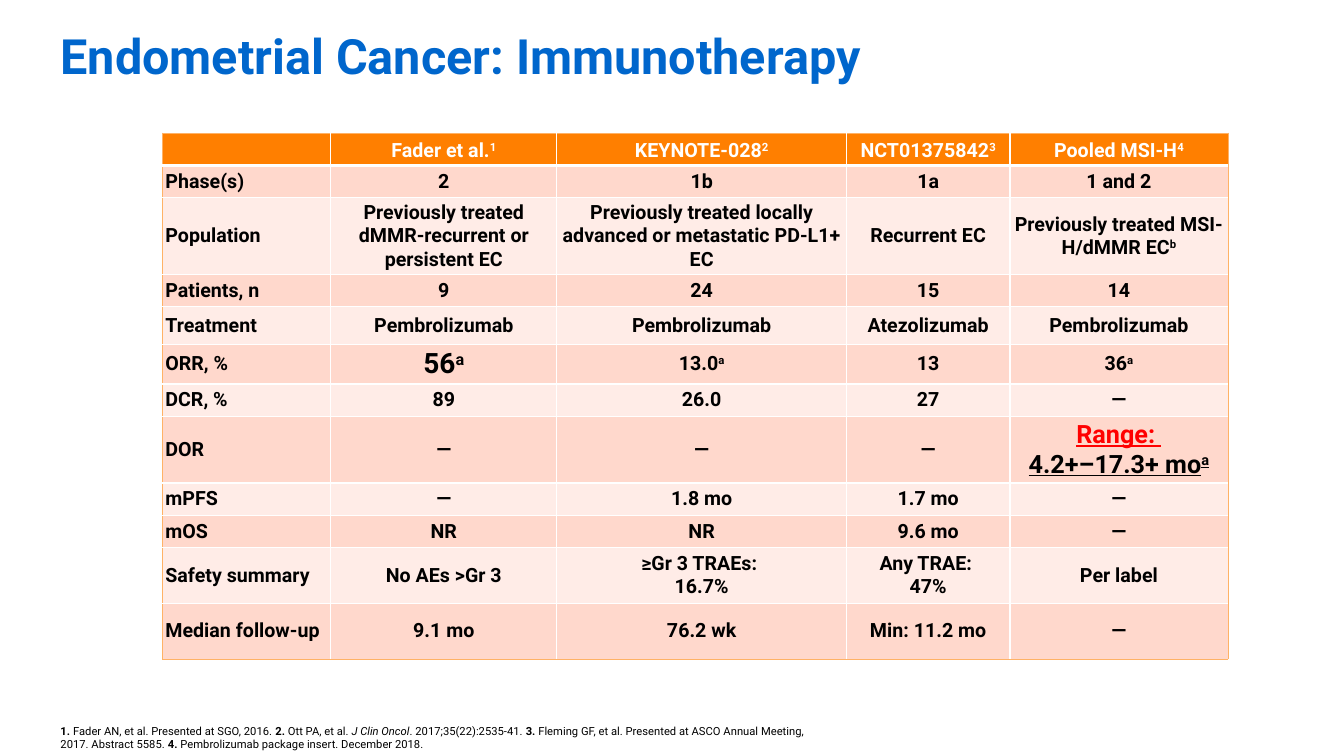
from copy import deepcopy
from dataclasses import dataclass

from lxml import etree
from pptx import Presentation
from pptx import util as u
from pptx.dml.color import RGBColor
from pptx.enum import text
from pptx.oxml.ns import qn


@dataclass(frozen=True)
class Theme:
    font: str = "Roboto"
    title: str = "0066CC"
    ink: str = "000000"
    white: str = "FFFFFF"
    alert: str = "FF0000"
    header: str = "FF7F00"
    bands: tuple = ("FFECE7", "FFD8CC")
    frame: str = "FFB266"
    title_pt: float = 34.7
    cell_pt: float = 14
    range_pt: float = 18
    highlight_pt: float = 20
    note_pt: float = 8


T = Theme()
WIDTH, HEIGHT = u.Inches(13.33), u.Inches(7.5)

# Left, top, width and height in percent of the slide
TITLE_BOX = (4.5, 0.67, 93.7, 13.33)
TABLE_BOX = (12.08, 17.6, 79.29, 68)
NOTE_BOX = (4.5, 95.73, 56.26, 3.6)

COLUMNS = (1.67, 2.24, 2.87, 1.62, 2.16)
ROWS = (0.32, 0.32, 0.67, 0.32, 0.37, 0.38, 0.32, 0.64, 0.32, 0.32, 0.55, 0.55)

# "^" starts a superscript, "\v" breaks the line
TRIALS = [
    ("", "Fader et al.^1", "KEYNOTE-028^2", "NCT01375842^3", "Pooled MSI-H^4"),
    ("Phase(s)", "2", "1b", "1a", "1 and 2"),
    ("Population", "Previously treated dMMR-recurrent or persistent EC",
     "Previously treated locally advanced or metastatic PD-L1+ EC",
     "Recurrent EC", "Previously treated MSI-H/dMMR EC^b"),
    ("Patients, n", "9", "24", "15", "14"),
    ("Treatment", "Pembrolizumab", "Pembrolizumab", "Atezolizumab", "Pembrolizumab"),
    ("ORR, %", "56^a", "13.0^a", "13", "36^a"),
    ("DCR, %", "89", "26.0", "27", "—"),
    ("DOR", "—", "—", "—", "Range: \v4.2+–17.3+ mo^a"),
    ("mPFS", "—", "1.8 mo", "1.7 mo", "—"),
    ("mOS", "NR", "NR", "9.6 mo", "—"),
    ("Safety summary", "No AEs >Gr 3", "≥Gr 3 TRAEs: \v16.7%", "Any TRAE: \v47%", "Per label"),
    ("Median follow-up", "9.1 mo", "76.2 wk", "Min: 11.2 mo", "—"),
]
ORR_FADER, DOR_POOLED = (5, 1), (7, 4)

# Text, bold, italic
REFERENCES = [
    ("1. ", True, False),
    ("Fader AN, et al. Presented at SGO, 2016. ", False, False),
    ("2.", True, False),
    (" Ott PA, et al. ", False, False),
    ("J Clin Oncol", False, True),
    (". 2017;35(22):2535-41. ", False, False),
    ("3.", True, False),
    (" Fleming GF, et al. Presented at ASCO Annual Meeting, 2017. Abstract 5585. ", False, False),
    ("4. ", True, False),
    ("Pembrolizumab package insert. December 2018.", False, False),
]


def place(box):
    """Turn percentages of the slide into lengths."""
    return [round(share * side / 100) for share, side in zip(box, (WIDTH, HEIGHT) * 2)]


def style(r, size, color, bold=True, italic=False):
    r.font.name = T.font
    r.font.size = u.Pt(size)
    r.font.bold = bold
    r.font.italic = italic
    r.font.color.rgb = RGBColor.from_string(color)


def add_text_box(s, box, anchor):
    tf = s.shapes.add_textbox(*place(box)).text_frame
    tf.word_wrap = True
    tf.vertical_anchor = anchor
    tf.margin_left = tf.margin_top = tf.margin_right = tf.margin_bottom = 0
    return tf


def add_title(s, words):
    tf = add_text_box(s, TITLE_BOX, text.MSO_ANCHOR.MIDDLE)
    tf.text = words
    style(tf.paragraphs[0].runs[0], T.title_pt, T.title)


def add_references(s):
    tf = add_text_box(s, NOTE_BOX, text.MSO_ANCHOR.BOTTOM)
    tf.auto_size = text.MSO_AUTO_SIZE.SHAPE_TO_FIT_TEXT
    p = tf.paragraphs[0]
    p.space_before, p.space_after = u.Pt(4), u.Pt(5.3)
    for words, bold, italic in REFERENCES:
        r = p.add_run()
        r.text = words
        style(r, T.note_pt, T.ink, bold, italic)


def write_cell(cell, words, size, color):
    p = cell.text_frame.paragraphs[0]
    p.space_before = u.Pt(3)
    if not words:
        etree.SubElement(p._p, qn("a:endParaRPr"), sz=str(size * 100))
        return p
    body, _, mark = words.partition("^")
    p.text = body
    if mark:
        r = p.add_run()
        r.text = mark
        r.font._element.set("baseline", "30000")
    for r in p.runs:
        style(r, size, color)
    for br in p._p.findall(qn("a:br")):
        br.append(deepcopy(p.runs[0].font._element))
    return p


def set_borders(cell, lines):
    """Draw the borders given as (color, points) in the order left, right, top, bottom."""
    tc_pr = cell._tc.get_or_add_tcPr()
    for i, (side, (color, points)) in enumerate(zip("LRTB", lines)):
        ln = etree.Element(qn(f"a:ln{side}"), w=str(u.Pt(points)))
        fill = etree.SubElement(ln, qn("a:solidFill"))
        etree.SubElement(fill, qn("a:srgbClr"), val=color)
        tc_pr.insert(i, ln)


def cell_borders(row, col):
    inner, outer, rule = (T.white, 1), (T.frame, 0.5), (T.white, 3)
    last_row, last_col = len(ROWS) - 1, len(COLUMNS) - 1
    bottom = rule if row == 0 else outer if row == last_row else inner
    top = outer if row == 0 else rule if row == 1 else inner
    return (outer if col == 0 else inner, outer if col == last_col else inner, top, bottom)


def add_trial_table(s):
    left, top, width, height = place(TABLE_BOX)
    table = s.shapes.add_table(len(ROWS), len(COLUMNS), left, top, width, height).table
    table.horz_banding = False
    for column, share in zip(table.columns, COLUMNS):
        column.width = round(width * share / sum(COLUMNS))
    for line, share in zip(table.rows, ROWS):
        line.height = round(height * share / sum(ROWS))

    sizes = {ORR_FADER: T.highlight_pt, DOR_POOLED: T.range_pt}
    for row, values in enumerate(TRIALS):
        for col, words in enumerate(values):
            cell = table.cell(row, col)
            is_header = row == 0
            cell.margin_left = cell.margin_right = u.Inches(0.03)
            cell.margin_top = cell.margin_bottom = u.Inches(0.03)
            cell.vertical_anchor = text.MSO_ANCHOR.BOTTOM if is_header else text.MSO_ANCHOR.MIDDLE
            cell.fill.solid()
            cell.fill.fore_color.rgb = RGBColor.from_string(T.header if is_header else T.bands[row % 2])
            set_borders(cell, cell_borders(row, col))
            p = write_cell(cell, words, sizes.get((row, col), T.cell_pt),
                           T.white if is_header else T.ink)
            p.alignment = text.PP_ALIGN.CENTER if col else text.PP_ALIGN.LEFT

    range_runs = table.cell(*DOR_POOLED).text_frame.paragraphs[0].runs
    for r in range_runs:
        r.font.underline = True
    range_runs[0].font.color.rgb = RGBColor.from_string(T.alert)


def main():
    prs = Presentation()
    prs.slide_width, prs.slide_height = WIDTH, HEIGHT
    s = prs.slides.add_slide(prs.slide_layouts[6])
    add_title(s, "Endometrial Cancer: Immunotherapy")
    add_references(s)
    add_trial_table(s)
    prs.save("out.pptx")


if __name__ == "__main__":
    main()
